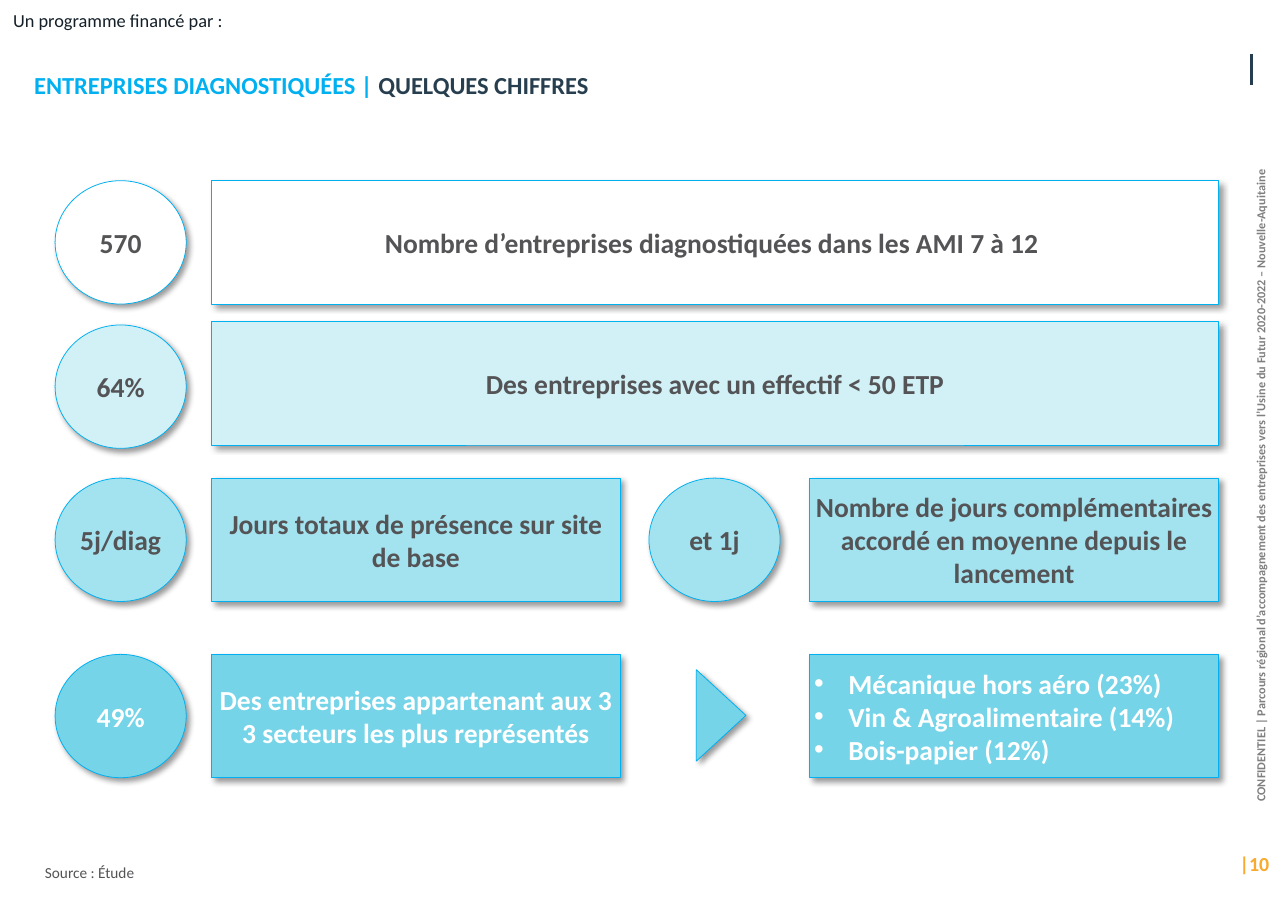
from lxml.etree import SubElement
from pptx import Presentation
from pptx.dml.color import RGBColor
from pptx.enum.shapes import MSO_CONNECTOR, MSO_SHAPE
from pptx.enum.text import MSO_ANCHOR, MSO_AUTO_SIZE, PP_ALIGN
from pptx.oxml.ns import qn
from pptx.util import Inches, Pt

# Content
COLORS = {
    "white": "FFFFFF", "pale": "D1F1F7", "light": "A3E3EF", "mid": "75D4E8",
    "cyan": "00B0F0", "grey": "545457", "navy": "273E4F", "rule": "253D4E",
    "ink": "141F28", "muted": "7F7F7F", "orange": "F8AA2E", "black": "000000",
}
TITLE = [("ENTREPRISES DIAGNOSTIQUÉES | ", "cyan"), ("QUELQUES CHIFFRES", "navy")]
CONFIDENTIALITY = ("CONFIDENTIEL | Parcours régional d’accompagnement des entreprises "
                   "vers l’Usine du Futur 2020-2022 – Nouvelle-Aquitaine")
FUNDING = "Un programme financé par :"
SOURCE = "Source : Étude"
PAGE = " |10"
# circle top, box top, fill, text colour, (figure, label) pairs
ROWS = [
    (1.64, 1.64, "white", "grey",
     [("570", "Nombre d’entreprises diagnostiquées dans les AMI 7 à 12 ")]),
    (2.95, 2.92, "pale", "grey", [("64%", "Des entreprises avec un effectif < 50 ETP")]),
    (4.34, 4.34, "light", "grey",
     [("5j/diag", "Jours totaux de présence sur site de base"),
      ("et 1j", "Nombre de jours complémentaires accordé en moyenne depuis le lancement")]),
    (5.94, 5.94, "mid", "white",
     [("49%", "Des entreprises appartenant aux 3 3 secteurs les plus représentés")]),
]
SECTORS = ["Mécanique hors aéro (23%)", "Vin & Agroalimentaire (14%)", "Bois-papier (12%)"]

# Grid
CIRCLE_LEFTS, CIRCLE_WIDTH = (0.5, 5.89), 1.19
BOX_LEFTS, BOX_WIDTH = (1.92, 7.35), 3.71
FULL_WIDTH = BOX_LEFTS[1] + BOX_WIDTH - BOX_LEFTS[0]
ROW_HEIGHT = 1.12


def color(name):
    return RGBColor.from_string(COLORS[name])


def add_run(paragraph, text, size, tint, bold=True):
    run = paragraph.add_run()
    run.text = text
    run.font.name, run.font.size, run.font.bold = "Calibri", Pt(size), bold
    run.font.color.rgb = color(tint)


def set_insets(frame, inset):
    frame.margin_left = frame.margin_right = Inches(inset)
    frame.margin_top = frame.margin_bottom = Inches(inset)


def add_label(area, text, size, tint, bold=False, align=PP_ALIGN.LEFT):
    label = slide.shapes.add_textbox(*map(Inches, area))
    label.text_frame.word_wrap = True
    paragraph = label.text_frame.paragraphs[0]
    paragraph.alignment = align
    add_run(paragraph, text, size, tint, bold)
    return label


def add_panel(preset, area, fill, texts=(), tint="grey", bulleted=False):
    panel = slide.shapes.add_shape(preset, *map(Inches, area))
    panel.fill.solid()
    panel.fill.fore_color.rgb = color(fill)
    panel.line.color.rgb = color("cyan")
    panel.line.width = Pt(0.5)
    # Soft shadow to the lower right
    panel.shadow.inherit = False
    effects = panel._element.spPr.find(qn("a:effectLst"))
    shadow = SubElement(effects, qn("a:outerShdw"), blurRad=str(Pt(4)), dist=str(Pt(3)),
                        dir=str(45 * 60000), algn="tl", rotWithShape="0")
    shade = SubElement(shadow, qn("a:srgbClr"), val=COLORS["black"])
    SubElement(shade, qn("a:alpha"), val="40000")
    # Text
    frame = panel.text_frame
    frame.word_wrap = True
    frame.vertical_anchor = MSO_ANCHOR.MIDDLE
    set_insets(frame, 0.04)
    for index, text in enumerate(texts):
        paragraph = frame.add_paragraph() if index else frame.paragraphs[0]
        paragraph.alignment = PP_ALIGN.LEFT if bulleted else PP_ALIGN.CENTER
        if bulleted:
            properties = paragraph._p.get_or_add_pPr()
            properties.set("marL", str(Inches(0.31)))
            properties.set("indent", str(Inches(-0.31)))
            SubElement(properties, qn("a:buFont"), typeface="Arial")
            SubElement(properties, qn("a:buChar"), char="•")
        add_run(paragraph, text, 18, tint)
    return panel


deck = Presentation()
deck.slide_width, deck.slide_height = Inches(11.69), Inches(8.27)
slide = deck.slides.add_slide(deck.slide_layouts[5])

# Title
title = slide.shapes.title
title.left, title.top, title.width, title.height = map(Inches, (0.31, 0.51, 6.86, 0.51))
heading = title.text_frame
heading.word_wrap = True
heading.auto_size = MSO_AUTO_SIZE.NONE
heading.vertical_anchor = MSO_ANCHOR.MIDDLE
set_insets(heading, 0)
heading.paragraphs[0].alignment = PP_ALIGN.LEFT
for text, tint in TITLE:
    add_run(heading.paragraphs[0], text, 16, tint)

# Margins of the page
confidentiality = add_label((8.17, 4.25, 6.54, 0.32), CONFIDENTIALITY, 8, "muted",
                            True, PP_ALIGN.CENTER)
confidentiality.rotation = 270
confidentiality.text_frame.vertical_anchor = MSO_ANCHOR.MIDDLE
set_insets(confidentiality.text_frame, 0)
rule = slide.shapes.add_connector(MSO_CONNECTOR.STRAIGHT, *map(Inches, (11.36, 0.49, 11.36, 0.77)))
rule.line.color.rgb = color("rule")
rule.line.width = Pt(1.5)
SubElement(rule._element.spPr, qn("a:effectLst"))
add_label((0.02, 0.03, 2.32, 0.23), FUNDING, 12, "ink")
add_label((11.04, 7.68, 0.65, 0.44), PAGE, 13, "orange", True, PP_ALIGN.CENTER)
add_label((0.31, 7.79, 6.61, 0.39), SOURCE, 10, "grey")

# Key figures
for circle_top, box_top, fill, tint, figures in ROWS:
    box_width = FULL_WIDTH if box_top < 4 else BOX_WIDTH
    for circle_left, box_left, (figure, label) in zip(CIRCLE_LEFTS, BOX_LEFTS, figures):
        add_panel(MSO_SHAPE.OVAL, (circle_left, circle_top, CIRCLE_WIDTH, ROW_HEIGHT),
                  fill, [figure], tint)
        add_panel(MSO_SHAPE.RECTANGLE, (box_left, box_top, box_width, ROW_HEIGHT),
                  fill, [label], tint)

# Leading sectors
pointer = add_panel(MSO_SHAPE.ISOSCELES_TRIANGLE, (6.13, 6.27, 0.83, 0.45), "mid")
pointer.rotation = 90
add_panel(MSO_SHAPE.RECTANGLE, (BOX_LEFTS[1], ROWS[-1][1], BOX_WIDTH, ROW_HEIGHT),
          "mid", SECTORS, "white", bulleted=True)

deck.save("out.pptx")
